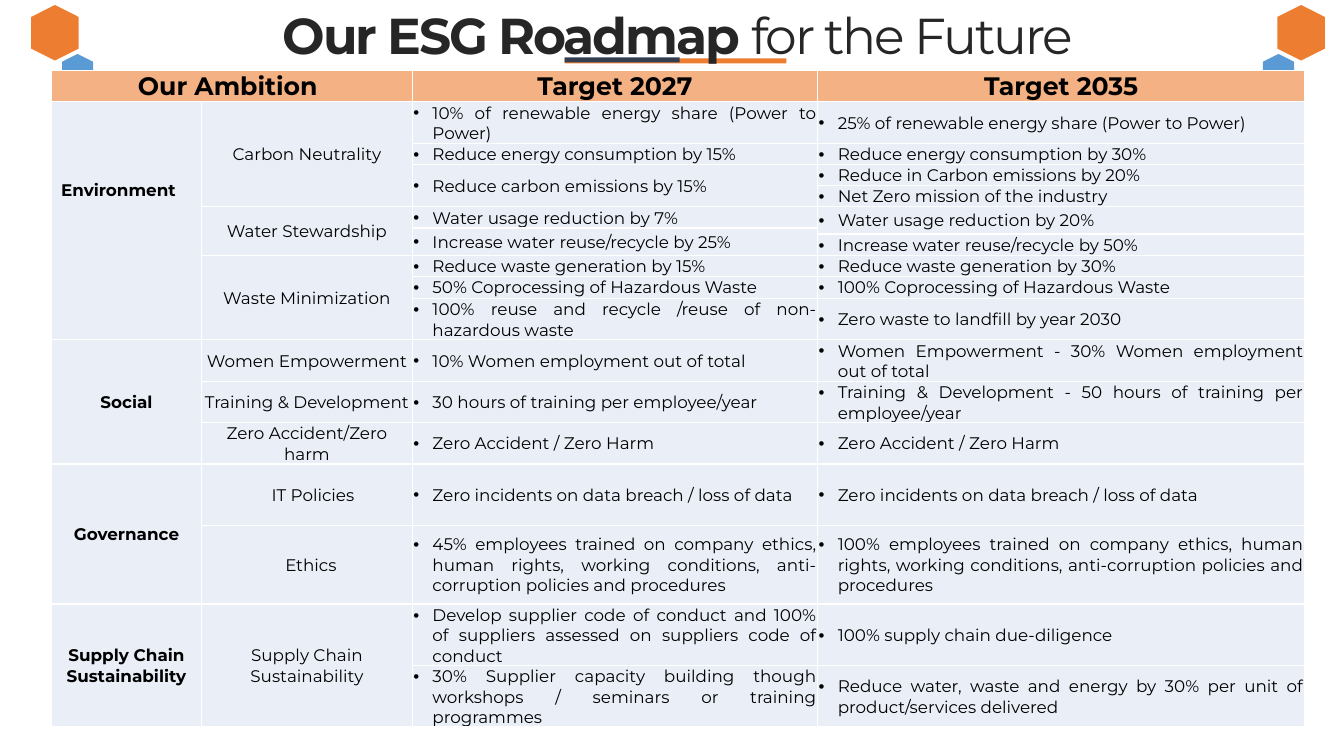
from dataclasses import dataclass
from typing import Any

import pptx
import pptx.dml.color
import pptx.enum.shapes
import pptx.enum.text
import pptx.oxml
import pptx.oxml.ns
import pptx.util

EMU_PER_PX = 9144
FONT = "Montserrat"
COLORS = {
    "orange": "ED7D31",
    "blue": "5B9BD5",
    "navy": "333F50",
    "title": "262626",
    "text": "000000",
    "header": "F4B183",
    "body": "EAEFF7",
    "border": "FFFFFF",
}
SHAPES = pptx.enum.shapes.MSO_SHAPE
ALIGN = pptx.enum.text.PP_ALIGN
MIDDLE = pptx.enum.text.MSO_ANCHOR.MIDDLE
COLUMN_WIDTHS = [149, 209, 402, 483]
ROW_HEIGHTS = [30, 41, 20, 20, 20, 20, 6, 20, 20, 22, 41, 41, 41, 41, 61, 78, 61, 61]


@dataclass(frozen=True)
class Block:
    left: int
    top: int
    width: int
    height: int
    color: str
    preset: Any = SHAPES.HEXAGON
    rotation: int = 270


@dataclass(frozen=True)
class Entry:
    """Cell text, the rows it covers, and extra margins that shift it."""
    text: str
    rows: int = 1
    left: int = 0
    right: int = 0
    bottom: int = 0


@dataclass(frozen=True)
class Style:
    size: int = 12
    bold: bool = False
    bullet: bool = False


BACK_BLOCKS = [
    Block(1252, 54, 32, 31, "blue"),
    Block(61, 54, 32, 31, "blue"),
    Block(560, 58, 220, 5, "orange", SHAPES.RECTANGLE, 0),
    Block(560, 57, 114, 5, "navy", SHAPES.RECTANGLE, 0),
]
FRONT_BLOCKS = [Block(left, 9, 55, 47, "orange") for left in (27, 1263)]

HEADERS = {0: Entry("Our Ambition", right=8), 2: Entry("Target 2027"), 3: Entry("Target 2035")}
PILLARS = [
    Entry("Environment", 10, right=16, bottom=62),
    Entry("Social", 3),
    Entry("Governance", 2),
    Entry("Supply Chain Sustainability", 2),
]
TOPICS = [
    Entry("Carbon Neutrality", 4),
    Entry("Water Stewardship", 3),
    Entry("Waste Minimization", 3),
    Entry("Women Empowerment"),
    Entry("Training & Development"),
    Entry("Zero Accident/Zero harm"),
    Entry("IT Policies", left=12),
    Entry("Ethics", left=8),
    Entry("Supply Chain Sustainability", 2),
]
TARGETS_2027 = [
    Entry("10% of renewable energy share (Power to Power)"),
    Entry("Reduce energy consumption by 15%"),
    Entry("Reduce carbon emissions by 15%", 2),
    Entry("Water usage reduction by 7%"),
    Entry("Increase water reuse/recycle by 25%", 2),
    Entry("Reduce waste generation by 15%"),
    Entry("50% Coprocessing of Hazardous Waste"),
    Entry("100% reuse and recycle /reuse of non-hazardous waste"),
    Entry("10% Women employment out of total"),
    Entry("30 hours of training per employee/year"),
    Entry("Zero Accident / Zero Harm"),
    Entry("Zero incidents on data breach / loss of data"),
    Entry("45% employees trained on company ethics, human rights, working conditions, "
          "anti-corruption policies and procedures"),
    Entry("Develop supplier code of conduct and 100% of suppliers assessed on suppliers "
          "code of conduct"),
    Entry("30% Supplier capacity building though workshops / seminars or training programmes"),
]
TARGETS_2035 = [
    Entry("25% of renewable energy share (Power to Power)"),
    Entry("Reduce energy consumption by 30%"),
    Entry("Reduce in Carbon emissions by 20%"),
    Entry("Net Zero mission of the industry"),
    Entry("Water usage reduction by 20%", 2),
    Entry("Increase water reuse/recycle by 50%"),
    Entry("Reduce waste generation by 30%"),
    Entry("100% Coprocessing of Hazardous Waste"),
    Entry("Zero waste to landfill by year 2030"),
    Entry("Women Empowerment - 30% Women employment out of total"),
    Entry("Training & Development - 50 hours of training per employee/year"),
    Entry("Zero Accident / Zero Harm"),
    Entry("Zero incidents on data breach / loss of data"),
    Entry("100% employees trained on company ethics, human rights, working conditions, "
          "anti-corruption policies and procedures"),
    Entry("100% supply chain due-diligence"),
    Entry("Reduce water, waste and energy by 30% per unit of product/services delivered"),
]
COLUMNS = [
    (PILLARS, Style(bold=True)),
    (TOPICS, Style()),
    (TARGETS_2027, Style(bullet=True)),
    (TARGETS_2035, Style(bullet=True)),
]


def px(length: int) -> pptx.util.Emu:
    return pptx.util.Emu(length * EMU_PER_PX)


def rgb(name: str) -> pptx.dml.color.RGBColor:
    return pptx.dml.color.RGBColor.from_string(COLORS[name])


def add_run(paragraph: Any, text: str, size: int, bold: bool, color: str) -> Any:
    run = paragraph.add_run()
    run.text = text
    run.font.name = FONT
    run.font.size = pptx.util.Pt(size)
    run.font.bold = bold
    run.font.color.rgb = rgb(color)
    return run


def add_block(slide: Any, block: Block) -> None:
    shape = slide.shapes.add_shape(
        block.preset, px(block.left), px(block.top), px(block.width), px(block.height))
    shape.rotation = block.rotation
    shape.shadow.inherit = False
    shape.fill.solid()
    shape.fill.fore_color.rgb = rgb(block.color)
    shape.line.fill.background()


def add_title(slide: Any) -> None:
    frame = slide.shapes.add_textbox(px(138), px(2), px(1069), px(64)).text_frame
    frame.word_wrap = True
    frame.vertical_anchor = MIDDLE
    paragraph = frame.paragraphs[0]
    paragraph.alignment = ALIGN.CENTER
    for text, bold in (("Our ESG Roadmap", True), (" for the Future", False)):
        run = add_run(paragraph, text, 36, bold, "title")
        run.font._element.set("spc", "-150")


def paint_cell(cell: Any, fill: str) -> None:
    cell.fill.solid()
    cell.fill.fore_color.rgb = rgb(fill)
    properties = cell._tc.get_or_add_tcPr()
    for position, side in enumerate(("lnL", "lnR", "lnT", "lnB")):
        properties.insert(position, pptx.oxml.parse_xml(
            f'<a:{side} {pptx.oxml.ns.nsdecls("a")} w="12700"><a:solidFill>'
            f'<a:srgbClr val="{COLORS["border"]}"/></a:solidFill></a:{side}>'))


def write_cell(cell: Any, entry: Entry, style: Style) -> None:
    cell.vertical_anchor = MIDDLE
    cell.margin_left, cell.margin_right = px(1 + entry.left), px(1 + entry.right)
    cell.margin_top, cell.margin_bottom = px(1), px(entry.bottom)
    paragraph = cell.text_frame.paragraphs[0]
    paragraph.alignment = ALIGN.JUSTIFY if style.bullet else ALIGN.CENTER
    if style.bullet:
        properties = paragraph._p.get_or_add_pPr()
        properties.set("marL", str(px(19)))
        properties.set("indent", str(px(-19)))
        for tag in ('buFont typeface="Arial"', 'buChar char="•"'):
            properties.append(pptx.oxml.parse_xml(f'<a:{tag} {pptx.oxml.ns.nsdecls("a")}/>'))
    add_run(paragraph, entry.text, style.size, style.bold, "text")


def add_roadmap(slide: Any) -> None:
    table = slide.shapes.add_table(
        len(ROW_HEIGHTS), len(COLUMN_WIDTHS), px(51), px(70),
        px(sum(COLUMN_WIDTHS)), px(sum(ROW_HEIGHTS))).table
    table.first_row = table.horz_banding = False
    for column, width in zip(table.columns, COLUMN_WIDTHS):
        column.width = px(width)
    for index, (row, height) in enumerate(zip(table.rows, ROW_HEIGHTS)):
        row.height = px(height)
        for cell in row.cells:
            paint_cell(cell, "body" if index else "header")
    table.cell(0, 0).merge(table.cell(0, 1))
    for column, entry in HEADERS.items():
        write_cell(table.cell(0, column), entry, Style(18, True))
    for column, (entries, style) in enumerate(COLUMNS):
        row = 1
        for entry in entries:
            cell = table.cell(row, column)
            if entry.rows > 1:
                cell.merge(table.cell(row + entry.rows - 1, column))
            write_cell(cell, entry, style)
            row += entry.rows


def main() -> None:
    presentation = pptx.Presentation()
    presentation.slide_width = pptx.util.Inches(13.33)
    presentation.slide_height = pptx.util.Inches(7.5)
    slide = presentation.slides.add_slide(presentation.slide_layouts[6])
    for block in BACK_BLOCKS:
        add_block(slide, block)
    add_title(slide)
    add_roadmap(slide)
    for block in FRONT_BLOCKS:
        add_block(slide, block)
    presentation.save("out.pptx")


if __name__ == "__main__":
    main()
